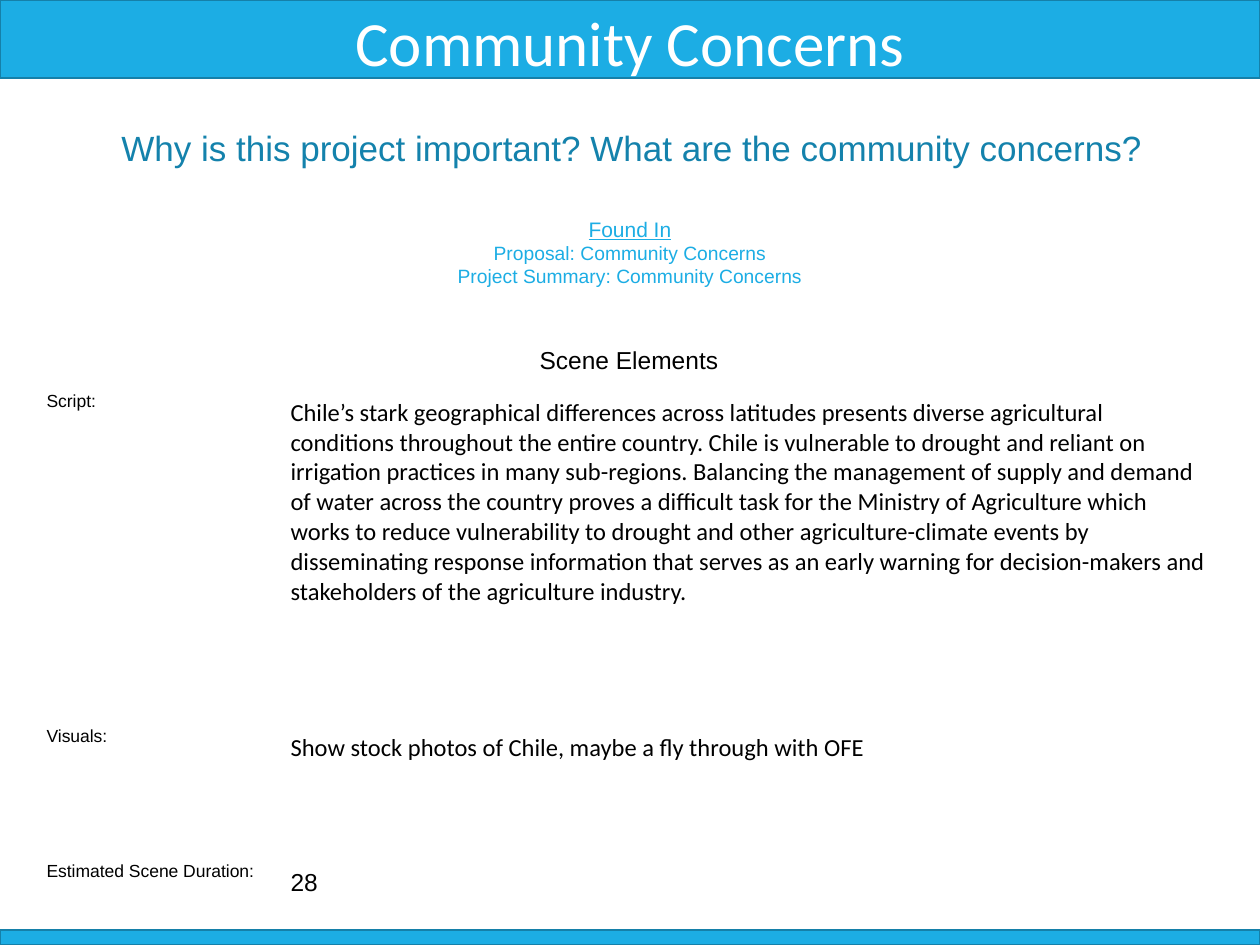
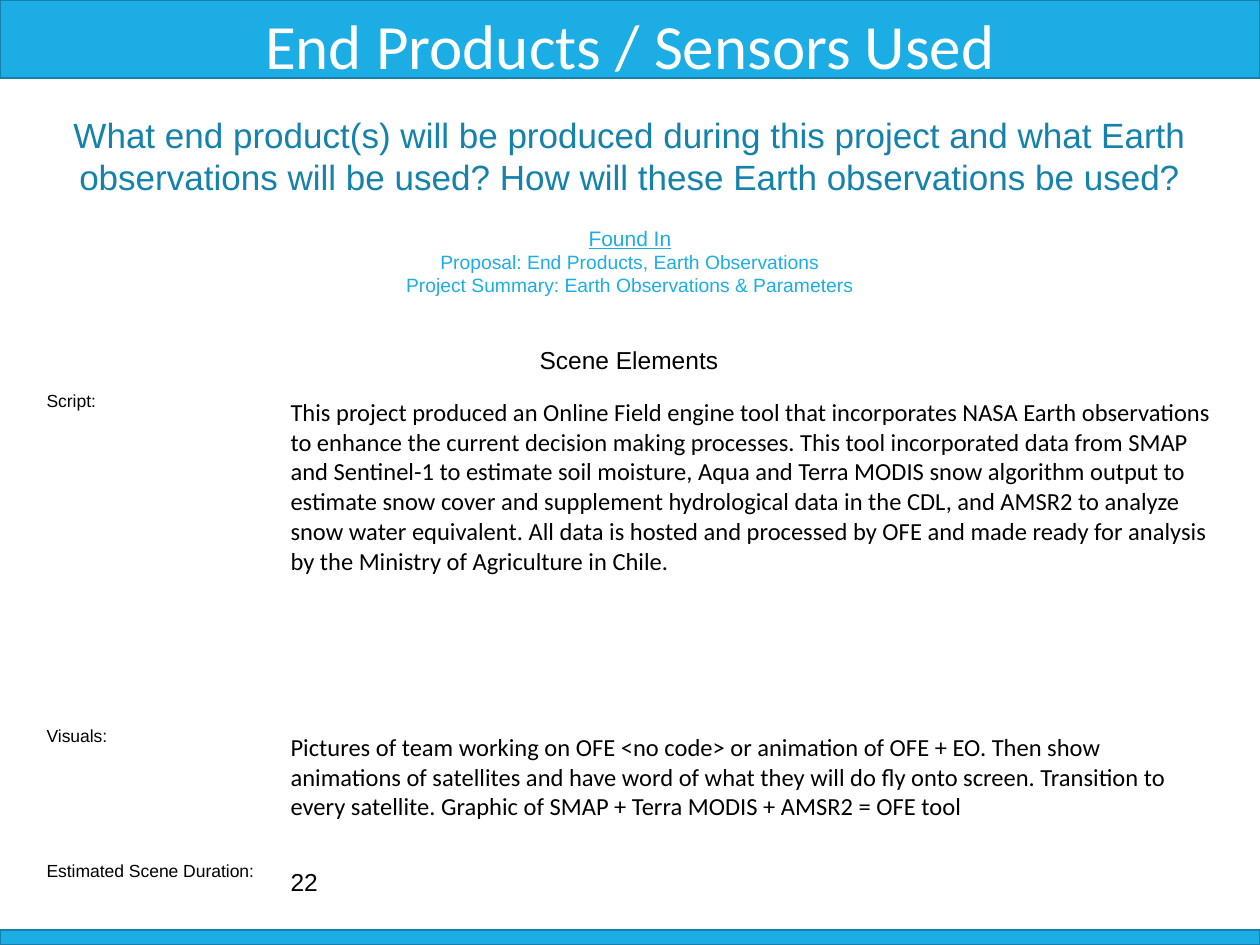
from pptx import Presentation
from pptx.dml.color import RGBColor
from pptx.enum.shapes import MSO_SHAPE
from pptx.enum.text import MSO_ANCHOR, MSO_AUTO_SIZE, PP_ALIGN
from pptx.util import Emu, Pt

RECTANGLE = MSO_SHAPE.RECTANGLE
TOP = MSO_ANCHOR.TOP
NO_AUTOFIT = MSO_AUTO_SIZE.NONE
LEFT, CENTER = PP_ALIGN.LEFT, PP_ALIGN.CENTER

PX_PER_INCH = 126
SLIDE_WIDTH, SLIDE_HEIGHT = 1260, 945
TITLE_ONLY = 5

COLORS = {
    "band": "1CADE4",
    "band_line": "1580A9",
    "question": "1482AC",
    "text": "000000",
    "white": "FFFFFF",
}

# Shared geometry: left, top, width, height
HEADER_BAND = (0, 0, SLIDE_WIDTH, 78)
FOOTER_BAND = (0, 930, SLIDE_WIDTH, 15)
TABLE_LEFT, TABLE_TOP = 34, 341
COLUMN_WIDTHS = (244, 946)
ROW_HEIGHTS = (44, 335, 136, 48)
VALUE_MARGIN = 13

SCENES = [
    {
        "title": "Community Concerns",
        "title_box": (193, -3, 874, 82),
        "question": "Why is this project important? What are the community concerns?",
        "question_box": (103, 120, 1058, 84),
        "sources": ["Proposal: Community Concerns",
                    "Project Summary: Community Concerns"],
        "sources_box": (444, 210, 372, 84),
        "script": "Chile’s stark geographical differences across latitudes presents "
                  "diverse agricultural conditions throughout the entire country. Chile is "
                  "vulnerable to drought and reliant on irrigation practices in many "
                  "sub-regions. Balancing the management of supply and demand of water "
                  "across the country proves a difficult task for the Ministry of "
                  "Agriculture which works to reduce vulnerability to drought and other "
                  "agriculture-climate events by disseminating response information that "
                  "serves as an early warning for decision-makers and stakeholders of the "
                  "agriculture industry.",
        "visuals": "Show stock photos of Chile, maybe a fly through with OFE",
        "duration": "28",
    },
    {
        "title": "End Products / Sensors Used",
        "title_box": (163, 0, 934, 80),
        "question": "What end product(s) will be produced during this project and what "
                    "Earth observations will be used? How will these Earth observations "
                    "be used?",
        "question_box": (34, 107, 1192, 127),
        "sources": ["Proposal: End Products, Earth Observations",
                    "Project Summary: Earth Observations & Parameters"],
        "sources_box": (214, 219, 832, 84),
        "script": "This project produced an Online Field engine tool that incorporates "
                  "NASA Earth observations to enhance the current decision making "
                  "processes. This tool incorporated data from SMAP and Sentinel-1 to "
                  "estimate soil moisture, Aqua and Terra MODIS snow algorithm output to "
                  "estimate snow cover and supplement hydrological data in the CDL, and "
                  "AMSR2 to analyze snow water equivalent. All data is hosted and "
                  "processed by OFE and made ready for analysis by the Ministry of "
                  "Agriculture in Chile.",
        "visuals": "Pictures of team working on OFE <no code> or animation of OFE + EO. "
                   "Then show animations of satellites and have word of what they will do "
                   "fly onto screen. Transition to every satellite. Graphic of SMAP + "
                   "Terra MODIS + AMSR2 = OFE tool",
        "duration": "22",
    },
]


def px(length):
    return Emu(round(length * 914400 / PX_PER_INCH))


def color(name):
    return RGBColor.from_string(COLORS[name])


def style_paragraph(paragraph, size, color_name, font_name="Arial", align=CENTER,
                    underline=False):
    paragraph.alignment = align
    font = paragraph.font
    font.name = font_name
    font.size = Pt(size)
    font.bold = False
    font.underline = underline
    font.color.rgb = color(color_name)


def add_band(slide, box):
    band = slide.shapes.add_shape(RECTANGLE, *map(px, box))
    band.shadow.inherit = False
    band.fill.solid()
    band.fill.fore_color.rgb = color("band")
    band.line.color.rgb = color("band_line")
    band.line.width = Pt(1.25)
    return band


def set_title(slide, text, box):
    title = slide.shapes.title
    title.left, title.top, title.width, title.height = map(px, box)
    frame = title.text_frame
    frame.text = text
    frame.word_wrap = True
    frame.auto_size = NO_AUTOFIT
    frame.vertical_anchor = TOP
    style_paragraph(frame.paragraphs[0], 36, "white", "Calibri")
    return title


def add_text(slide, box, lines):
    """Add centred lines, each given as (text, size, color name, underline)."""
    frame = slide.shapes.add_textbox(*map(px, box)).text_frame
    frame.word_wrap = True
    for index, (text, size, color_name, underline) in enumerate(lines):
        paragraph = frame.add_paragraph() if index else frame.paragraphs[0]
        paragraph.text = text
        style_paragraph(paragraph, size, color_name, underline=underline)


def fill_cell(cell, text, size, font_name="Arial", align=LEFT):
    cell.text = text
    style_paragraph(cell.text_frame.paragraphs[0], size, "text", font_name, align)


def add_scene_table(slide, scene):
    table = slide.shapes.add_table(
        len(ROW_HEIGHTS), len(COLUMN_WIDTHS), px(TABLE_LEFT), px(TABLE_TOP),
        px(sum(COLUMN_WIDTHS)), px(sum(ROW_HEIGHTS))).table
    table.first_row = False
    table.horz_banding = False
    for column, width in zip(table.columns, COLUMN_WIDTHS):
        column.width = px(width)
    for row, height in zip(table.rows, ROW_HEIGHTS):
        row.height = px(height)
    for cell in table.iter_cells():
        cell.fill.background()

    # Heading across both columns
    heading = table.cell(0, 0)
    heading.merge(table.cell(0, 1))
    fill_cell(heading, "Scene Elements", 14, align=CENTER)

    # Label and value rows
    rows = [("Script:", scene["script"], "Calibri"),
            ("Visuals:", scene["visuals"], "Calibri"),
            ("Estimated Scene Duration:", scene["duration"], "Arial")]
    for index, (label, value, value_font) in enumerate(rows, start=1):
        fill_cell(table.cell(index, 0), label, 10)
        value_cell = table.cell(index, 1)
        value_cell.margin_top = value_cell.margin_bottom = px(VALUE_MARGIN)
        fill_cell(value_cell, value, 14, value_font)


def add_scene_slide(presentation, scene):
    slide = presentation.slides.add_slide(presentation.slide_layouts[TITLE_ONLY])
    # Bands, with the title in front of the header band
    title = set_title(slide, scene["title"], scene["title_box"])
    title.element.addprevious(add_band(slide, HEADER_BAND).element)
    add_band(slide, FOOTER_BAND)
    # Scene content
    add_scene_table(slide, scene)
    sources = [(source, 11, "band", False) for source in scene["sources"]]
    add_text(slide, scene["sources_box"], [("Found In", 12, "band", True)] + sources)
    add_text(slide, scene["question_box"], [(scene["question"], 20, "question", False)])


def main():
    presentation = Presentation()
    presentation.slide_width = px(SLIDE_WIDTH)
    presentation.slide_height = px(SLIDE_HEIGHT)
    for scene in SCENES:
        add_scene_slide(presentation, scene)
    presentation.save("out.pptx")


if __name__ == "__main__":
    main()
